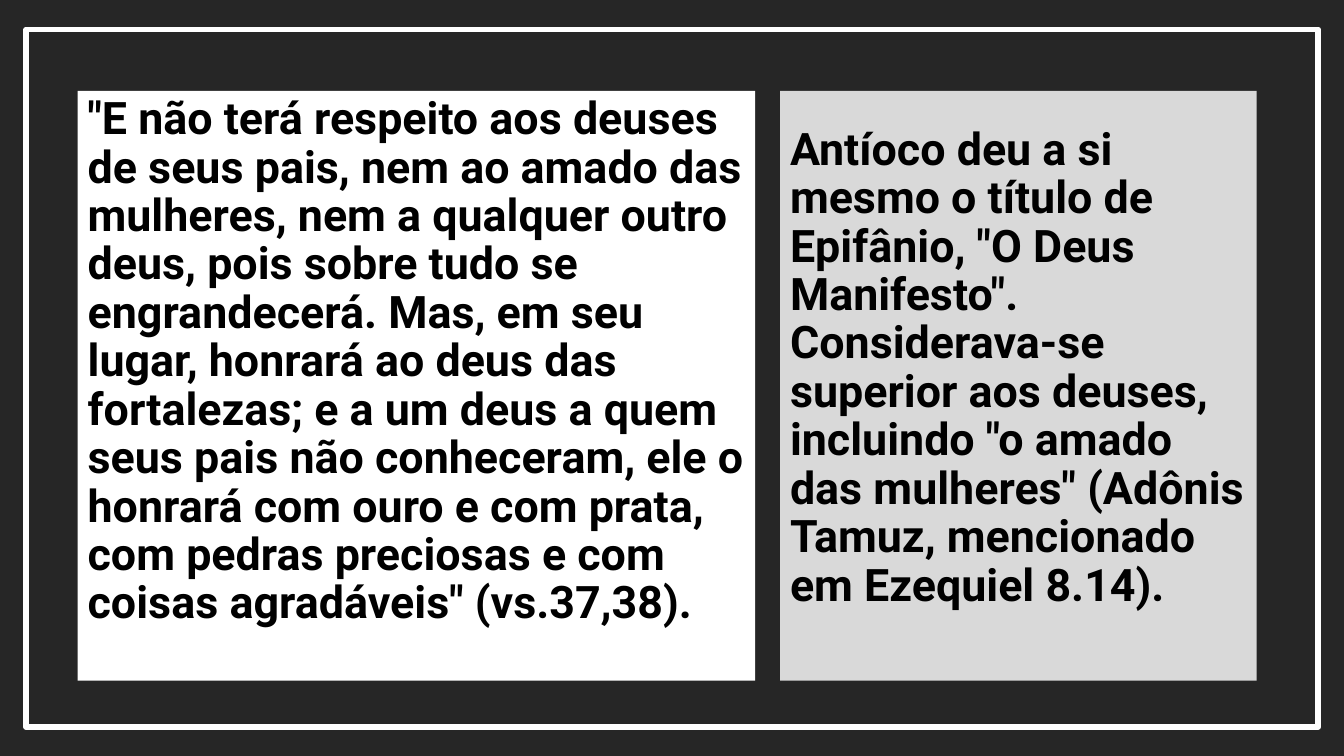
"""Builds a slide with a Bible passage beside its commentary on a framed dark background."""
from pptx import Presentation
from pptx import util as u
from pptx.dml.color import RGBColor
from pptx.enum import shapes, text

WHITE = RGBColor(0xFF, 0xFF, 0xFF)
BLACK = RGBColor(0x00, 0x00, 0x00)
CHARCOAL = RGBColor(0x26, 0x26, 0x26)
SILVER = RGBColor(0xD9, 0xD9, 0xD9)

WIDTH, HEIGHT = 33.87, 19.05
PANEL_TOP, PANEL_HEIGHT = 2.29, 14.86

VERSE = (
    '"E não terá respeito aos deuses de seus pais, nem ao amado das mulheres, '
    "nem a qualquer outro deus, pois sobre tudo se engrandecerá. Mas, em seu "
    "lugar, honrará ao deus das fortalezas; e a um deus a quem seus pais não "
    "conheceram, ele o honrará com ouro e com prata, com pedras preciosas e "
    'com coisas agradáveis" (vs.37,38).'
)
COMMENTARY = (
    'Antíoco deu a si mesmo o título de Epifânio, "O Deus Manifesto". '
    'Considerava-se superior aos deuses, incluindo "o amado das mulheres" '
    "(Adônis Tamuz, mencionado em Ezequiel 8.14)."
)


class PassageSlide:
    FONT = {"name": "Roboto", "size": u.Pt(32), "bold": True}
    PARAGRAPH = {
        "alignment": text.PP_ALIGN.LEFT,
        "line_spacing": 0.9,
        "space_before": u.Pt(10),
    }
    FRAME = {
        "word_wrap": True,
        "auto_size": text.MSO_AUTO_SIZE.NONE,
        "vertical_anchor": text.MSO_ANCHOR.TOP,
        "margin_left": u.Cm(0.25),
        "margin_right": u.Cm(0.25),
        "margin_bottom": u.Cm(0.13),
    }

    def __init__(self, slide):
        self.slide = slide

    @staticmethod
    def apply(target, values):
        for key, value in values.items():
            setattr(target, key, value)

    def rectangle(self, *box):
        area = self.slide.shapes.add_shape(
            shapes.MSO_SHAPE.RECTANGLE, *map(u.Cm, box)
        )
        area.shadow.inherit = False
        return area

    def block(self, box, color):
        area = self.rectangle(*box)
        area.fill.solid()
        area.fill.fore_color.rgb = color
        area.line.fill.background()
        return area

    def border(self, box, color, weight):
        outline = self.rectangle(*box)
        outline.fill.background()
        outline.line.color.rgb = color
        outline.line.width = u.Pt(weight)

    def panel(self, left, width, color, passage, top_margin):
        area = self.block((left, PANEL_TOP, width, PANEL_HEIGHT), color)
        frame = area.text_frame
        self.apply(frame, {**self.FRAME, "margin_top": u.Cm(top_margin)})
        paragraph = frame.paragraphs[0]
        self.apply(paragraph, self.PARAGRAPH)
        run = paragraph.add_run()
        run.text = passage
        self.apply(run.font, self.FONT)
        run.font.color.rgb = BLACK


def main():
    deck = Presentation()
    deck.slide_width, deck.slide_height = u.Cm(WIDTH), u.Cm(HEIGHT)
    page = PassageSlide(deck.slides.add_slide(deck.slide_layouts[6]))
    page.block((0, 0, WIDTH, HEIGHT), CHARCOAL)
    page.border((0.66, 0.74, 32.56, 17.58), WHITE, 4)
    page.panel(1.96, 17.07, WHITE, VERSE, 0.13)
    page.panel(19.66, 12.01, SILVER, COMMENTARY, 0.9)
    deck.save("out.pptx")


if __name__ == "__main__":
    main()
